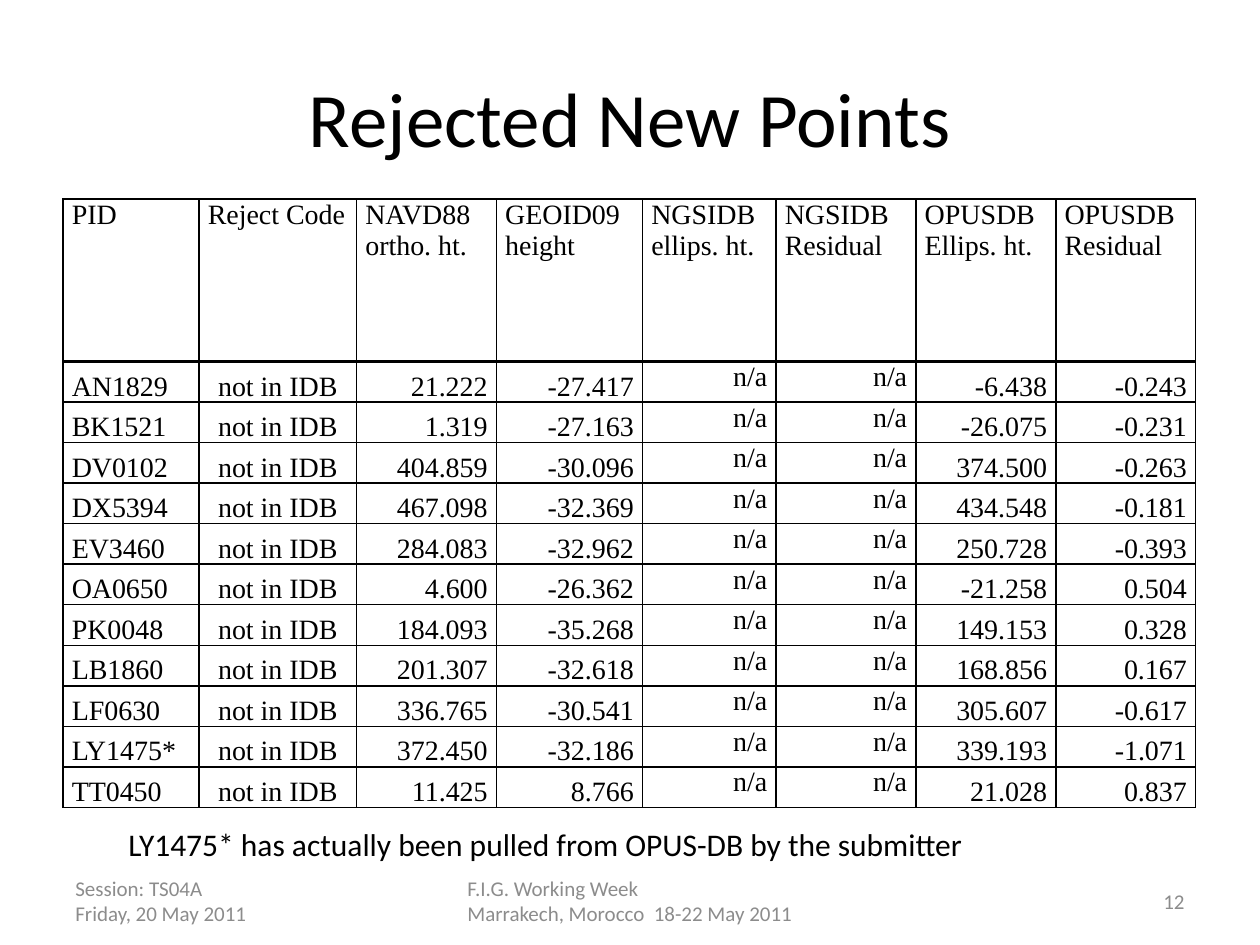
from lxml import etree
from pptx import Presentation
from pptx import util as u
from pptx.dml.color import RGBColor
from pptx.enum import text
from pptx.oxml.ns import qn

# Content
TITLE = "Rejected New Points"
NOTE = "LY1475* has actually been pulled from OPUS-DB by the submitter"
HEADS = ["PID", "Reject Code", "NAVD88 ortho. ht.", "GEOID09 height",
         "NGSIDB ellips. ht.", "NGSIDB\nResidual", "OPUSDB\nEllips. ht.",
         "OPUSDB Residual"]
CODE, NONE = "not in IDB", "n/a"
# PID, ortho. height, geoid height, OPUSDB ellips. height, OPUSDB residual
POINTS = [
    ("AN1829", "21.222", "-27.417", "-6.438", "-0.243"),
    ("BK1521", "1.319", "-27.163", "-26.075", "-0.231"),
    ("DV0102", "404.859", "-30.096", "374.500", "-0.263"),
    ("DX5394", "467.098", "-32.369", "434.548", "-0.181"),
    ("EV3460", "284.083", "-32.962", "250.728", "-0.393"),
    ("OA0650", "4.600", "-26.362", "-21.258", "0.504"),
    ("PK0048", "184.093", "-35.268", "149.153", "0.328"),
    ("LB1860", "201.307", "-32.618", "168.856", "0.167"),
    ("LF0630", "336.765", "-30.541", "305.607", "-0.617"),
    ("LY1475*", "372.450", "-32.186", "339.193", "-1.071"),
    ("TT0450", "11.425", "8.766", "21.028", "0.837"),
]
ROWS = [HEADS] + [[pid, CODE, ortho, geoid, NONE, NONE, height, resid]
                  for pid, ortho, geoid, height, resid in POINTS]

# Layout and format, in inches and points
WIDE, HIGH, EDGE = 10, 7.5, 0.5
COLS = [1.08, 1.25, 1.11, 1.16, 1.06, 1.11, 1.11, 1.11]
TOP, TALL, HEAD = 1.58, 4.83, 1.29
FOOT_TOP, FOOT_TALL, SIDE = 6.95, 0.4, 2.33
BLACK, GREY = "000000", "8C8C8C"
THIN, THICK = 1, 2.25
A, P = text.MSO_ANCHOR, text.PP_ALIGN
ALIGNS = [P.LEFT, P.CENTER] + [P.RIGHT] * 6
FOOTS = [
    ("Session: TS04A\vFriday, 20 May 2011", EDGE, SIDE, P.LEFT, 0.1),
    ("F.I.G. Working Week\vMarrakech, Morocco  18-22 May 2011",
     3.42, 3.17, P.LEFT, 0.29),
    ("12", WIDE - EDGE - SIDE, SIDE, P.RIGHT, 0.1),
]


def put(obj, values):
    for key, value in values.items():
        setattr(obj, key, value)


def style(frame, size, name="Calibri", color=BLACK, align=P.LEFT):
    for para in frame.paragraphs:
        para.alignment = align
        put(para.font, {"size": u.Pt(size), "name": name})
        para.font.color.rgb = RGBColor.from_string(color)


def place(shape, left, top, width, height):
    put(shape, {"left": u.Inches(left), "top": u.Inches(top),
                "width": u.Inches(width), "height": u.Inches(height)})


def write(slide, words, left, top, width, height, **look):
    box = slide.shapes.add_textbox(0, 0, 0, 0)
    place(box, left, top, width, height)
    box.text_frame.text = words
    style(box.text_frame, **look)
    return box.text_frame


def border(cell, widths):
    props = cell._tc.get_or_add_tcPr()
    for side, width in widths.items():
        line = etree.SubElement(props, qn("a:ln" + side), w=str(u.Pt(width)))
        fill = etree.SubElement(line, qn("a:solidFill"))
        etree.SubElement(fill, qn("a:srgbClr"), val=BLACK)


def fill_cell(cell, words, row, col):
    cell.text = words
    inset = u.Inches(0.07)
    low = row > 0 and words != NONE
    put(cell, {"margin_left": inset, "margin_right": inset,
               "margin_top": 0, "margin_bottom": 0,
               "vertical_anchor": A.BOTTOM if low else A.TOP})
    style(cell.text_frame, 16, "Times New Roman",
          align=ALIGNS[col] if row else P.LEFT)
    border(cell, {"L": THIN, "R": THIN, "T": THICK if row == 1 else THIN,
                  "B": THICK if row == 0 else THIN})
    cell.fill.background()


def main():
    deck = Presentation()
    put(deck, {"slide_width": u.Inches(WIDE), "slide_height": u.Inches(HIGH)})
    slide = deck.slides.add_slide(deck.slide_layouts[5])

    # Title
    title = slide.shapes.title
    place(title, EDGE, 0.3, WIDE - 2 * EDGE, 1.25)
    title.text_frame.text = TITLE
    title.text_frame.vertical_anchor = A.MIDDLE
    style(title.text_frame, 44, align=P.CENTER)

    # Footer
    for words, left, width, align, inset in FOOTS:
        frame = write(slide, words, left, FOOT_TOP, width, FOOT_TALL,
                      size=12, color=GREY, align=align)
        put(frame, {"word_wrap": True, "vertical_anchor": A.MIDDLE,
                    "margin_left": u.Inches(inset)})

    # Table of points
    table = slide.shapes.add_table(
        len(ROWS), len(COLS), u.Inches(EDGE), u.Inches(TOP),
        u.Inches(sum(COLS)), u.Inches(TALL)).table
    put(table, {"first_row": False, "horz_banding": False})
    for col, width in zip(table.columns, COLS):
        col.width = u.Inches(width)
    for r, row in enumerate(ROWS):
        step = (TALL - HEAD) / len(POINTS) if r else HEAD
        table.rows[r].height = u.Inches(step)
        for c, words in enumerate(row):
            fill_cell(table.cell(r, c), words, r, c)

    # Note below the table
    note = write(slide, NOTE, 0.92, 6.5, 6.91, 0.4, size=18)
    put(note, {"word_wrap": False,
               "auto_size": text.MSO_AUTO_SIZE.SHAPE_TO_FIT_TEXT})

    deck.save("out.pptx")


if __name__ == "__main__":
    main()
